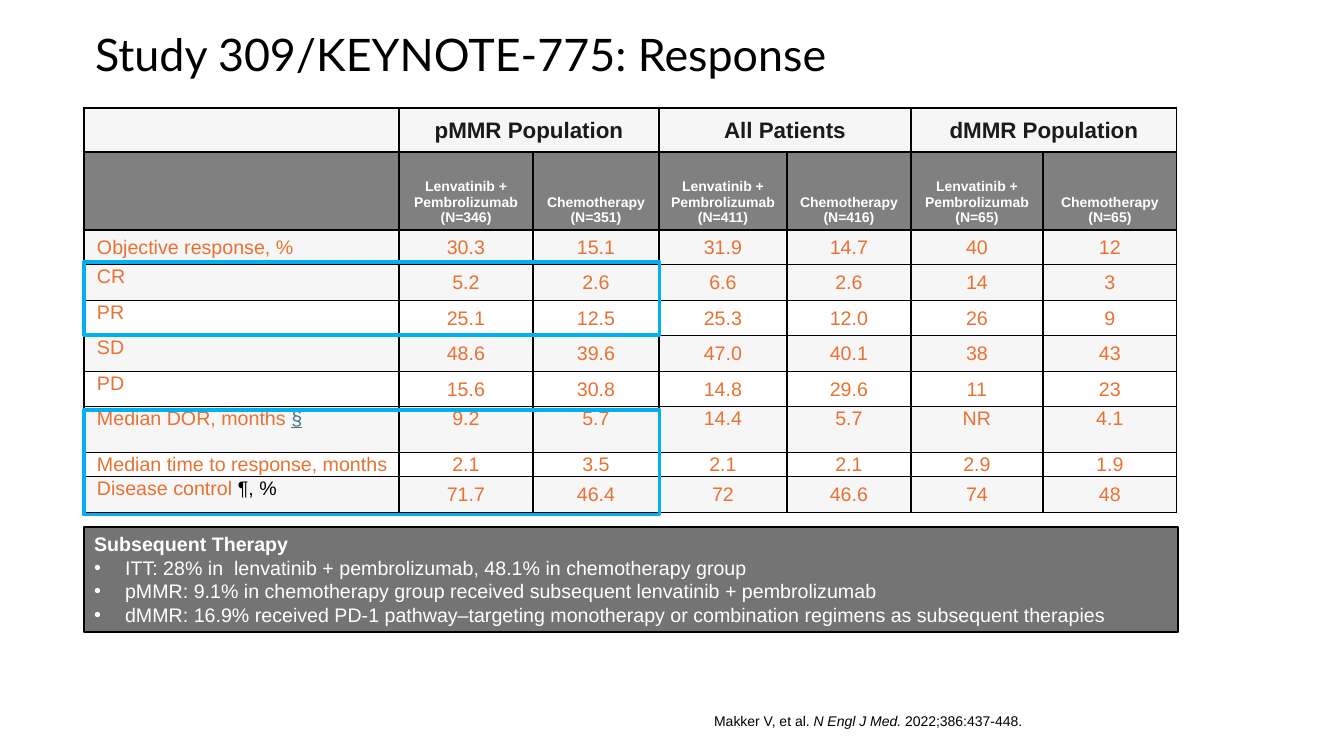
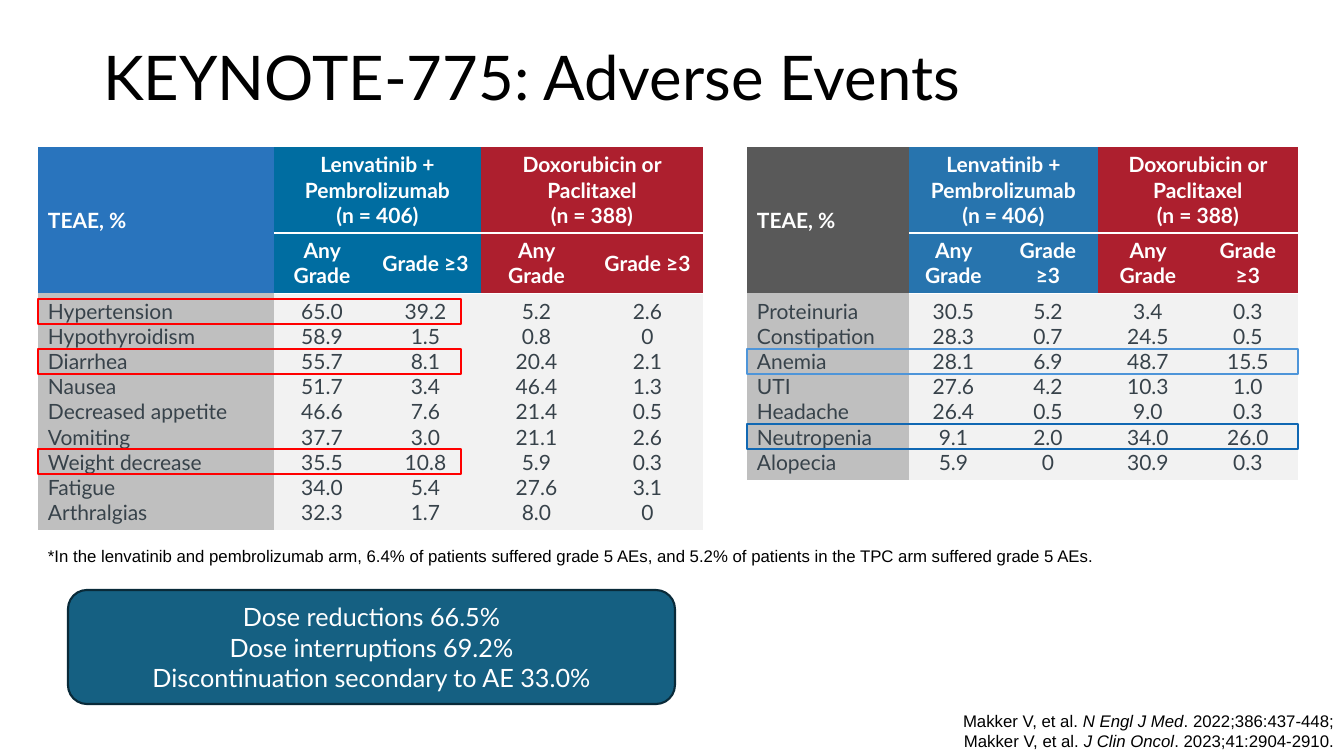
from dataclasses import dataclass, field

from lxml import etree
from pptx import Presentation
from pptx.dml.color import RGBColor
from pptx.enum.shapes import MSO_SHAPE
from pptx.enum.text import MSO_ANCHOR, MSO_AUTO_SIZE, PP_ALIGN
from pptx.oxml.ns import qn
from pptx.util import Emu, Pt

LEFT, CENTER, RIGHT = PP_ALIGN.LEFT, PP_ALIGN.CENTER, PP_ALIGN.RIGHT
TOP, MIDDLE, BOTTOM = MSO_ANCHOR.TOP, MSO_ANCHOR.MIDDLE, MSO_ANCHOR.BOTTOM
RECTANGLE, ROUNDED = MSO_SHAPE.RECTANGLE, MSO_SHAPE.ROUNDED_RECTANGLE
NO_AUTOFIT = MSO_AUTO_SIZE.NONE
TITLE_AND_CONTENT, TITLE_ONLY = 1, 5
PLAIN_TABLE = "{2D5ABB26-0587-4C30-8999-92F81FD0307C}"
SLIDE_WIDTH, SLIDE_HEIGHT = 1344, 756


def px(length):
    """Turn a length in pixels into EMU."""
    return Emu(round(length * 914400 / 100.8))


def text_style(name, size, color, bold=False):
    """Return the format values of one text style."""
    return {"name": name, "size": Pt(size), "color": color, "bold": bold}


@dataclass(frozen=True)
class Theme:
    """Colours and type sizes of the presentation."""

    black: str = "000000"
    white: str = "FFFFFF"
    pale: str = "F6F6F6"
    gray: str = "808080"
    panel: str = "747474"
    link: str = "467886"
    cyan: str = "00B0F0"
    red: str = "FF0000"
    sky: str = "4E95D9"
    blue: str = "1168B3"
    teal: str = "156082"
    teal_edge: str = "092A39"
    label_blue: str = "2974BD"
    label_gray: str = "595959"
    arm_teal: str = "006DA1"
    arm_blue: str = "2774AE"
    arm_red: str = "AD1F2E"
    event_fill: str = "BFBFBF"
    value_fill: str = "F2F2F2"
    text: dict = field(default_factory=lambda: {
        "title": text_style("Lato", 32, "000000"),
        "large title": text_style("Lato", 44, "000000"),
        "population": text_style("Arial", 16, "1A1A1A", True),
        "arm": text_style("Arial", 10, "FFFFFF", True),
        "response": text_style("Arial", 14, "E97132"),
        "panel": text_style("Arial", 14, "FFFFFF"),
        "small note": text_style("Arial", 10, "000000"),
        "note": text_style("Arial", 12, "000000"),
        "event header": text_style("Lato", 15, "FFFFFF", True),
        "event": text_style("Lato", 15, "37424A"),
        "callout": text_style("Lato", 18, "FFFFFF"),
    })


class Deck:
    """Holds the style and the current slide, and draws its elements."""

    def __init__(self, theme):
        """Start a presentation of the right size."""
        self.theme = theme
        self.presentation = Presentation()
        self.presentation.slide_width = px(SLIDE_WIDTH)
        self.presentation.slide_height = px(SLIDE_HEIGHT)
        self.slide = None

    def place(self, shape, box):
        """Move and size a shape."""
        for name, length in zip(("left", "top", "width", "height"), box):
            setattr(shape, name, px(length))

    def fill_text(self, frame, paragraphs, style, align=LEFT):
        """Fill a text frame with paragraphs made of strings or formatted runs."""
        for index, content in enumerate(paragraphs):
            paragraph = frame.paragraphs[0] if index == 0 else frame.add_paragraph()
            paragraph.alignment = align
            runs = [(content, {})] if isinstance(content, str) else content
            for text, changes in runs:
                run = paragraph.add_run()
                run.text = text
                formats = {**self.theme.text[style], **changes}
                color = formats.pop("color")
                for name, value in formats.items():
                    setattr(run.font, name, value)
                run.font.color.rgb = RGBColor.from_string(color)

    def paint(self, shape, fill, line, width):
        """Set the fill and outline of a shape."""
        if fill:
            shape.fill.solid()
            shape.fill.fore_color.rgb = RGBColor.from_string(fill)
        else:
            shape.fill.background()
        shape.line.color.rgb = RGBColor.from_string(line)
        shape.line.width = Pt(width)

    def new_slide(self, title, box, style, layout):
        """Add a slide and its title."""
        self.slide = self.presentation.slides.add_slide(
            self.presentation.slide_layouts[layout])
        shape = self.slide.shapes.title
        self.place(shape, box)
        shape.text_frame.auto_size = NO_AUTOFIT
        shape.text_frame.vertical_anchor = MIDDLE
        self.fill_text(shape.text_frame, [title], style)
        shape.text_frame.paragraphs[0].line_spacing = 0.9

    def list_panel(self, box, heading, items):
        """Turn the body placeholder into a filled panel with a bulleted list."""
        shape = self.slide.placeholders[1]
        self.place(shape, box)
        self.paint(shape, self.theme.panel, self.theme.black, 1.5)
        shape.text_frame.auto_size = NO_AUTOFIT
        self.fill_text(shape.text_frame, [[(heading, {"bold": True})], *items], "panel")
        for index, paragraph in enumerate(shape.text_frame.paragraphs):
            paragraph.space_before = Pt(0)
            properties = paragraph._p.get_or_add_pPr()
            indent = px(31) if index else 0
            properties.set("marL", str(indent))
            properties.set("indent", str(-indent))
            if index:
                etree.SubElement(properties, qn("a:buChar"), char="•")
            else:
                etree.SubElement(properties, qn("a:buNone"))

    def text_box(self, box, content, style, align=LEFT, anchor=TOP):
        """Add a wrapped text box with one paragraph."""
        shape = self.slide.shapes.add_textbox(*map(px, box))
        shape.text_frame.word_wrap = True
        shape.text_frame.vertical_anchor = anchor
        self.fill_text(shape.text_frame, [content], style, align)

    def shape(self, kind, box, line, width=1.5, fill=None):
        """Add a preset shape without shadow."""
        shape = self.slide.shapes.add_shape(kind, *map(px, box))
        shape.shadow.inherit = False
        self.paint(shape, fill, line, width)
        return shape

    def callout(self, box, lines):
        """Add a rounded box with centred lines."""
        shape = self.shape(ROUNDED, box, self.theme.teal_edge, fill=self.theme.teal)
        shape.text_frame.vertical_anchor = MIDDLE
        self.fill_text(shape.text_frame, lines, "callout", CENTER)

    def table(self, left, top, widths, heights):
        """Add a plain table with the given column widths and row heights."""
        frame = self.slide.shapes.add_table(
            len(heights), len(widths), px(left), px(top), px(sum(widths)), px(sum(heights)))
        table = frame.table
        table.first_row = table.horz_banding = False
        table._tbl.tblPr.find(qn("a:tableStyleId")).text = PLAIN_TABLE
        for column, width in zip(table.columns, widths):
            column.width = px(width)
        for row, height in zip(table.rows, heights):
            row.height = px(height)
        return table

    def cell(self, cell, content, style, fill, align=CENTER, anchor=MIDDLE,
             margins=(10, 5, 10, 5), sides="", border="FFFFFF"):
        """Fill and border one table cell and set its text."""
        names = ("margin_left", "margin_top", "margin_right", "margin_bottom")
        for name, margin in zip(names, margins):
            setattr(cell, name, px(margin))
        cell.vertical_anchor = anchor
        properties = cell._tc.get_or_add_tcPr()
        for side in sides:
            line = etree.SubElement(properties, qn("a:ln" + side), w=str(Pt(1)))
            solid = etree.SubElement(line, qn("a:solidFill"))
            etree.SubElement(solid, qn("a:srgbClr"), val=border)
        cell.fill.solid()
        cell.fill.fore_color.rgb = RGBColor.from_string(fill)
        if content:
            paragraphs = content.split("\n") if isinstance(content, str) else [content]
            self.fill_text(cell.text_frame, paragraphs, style, align)

    def response_table(self, left, top, populations, arms, responses):
        """Add the table of responses by population and arm."""
        theme = self.theme
        table = self.table(left, top, [315, 134, 126, 128, 124, 132, 134],
                           [44, 78, 35, 36, 35, 36, 35, 46, 24, 36])
        grid = {"sides": "LRTB", "border": theme.black}
        header = {**grid, "margins": (10, 6, 10, 4)}
        for column in (1, 3, 5):
            table.cell(0, column).merge(table.cell(0, column + 1))
        for column, (population, arm) in enumerate(zip(populations, arms)):
            self.cell(table.cell(0, column), population, "population", theme.pale, **header)
            self.cell(table.cell(1, column), arm, "arm", theme.gray, anchor=BOTTOM, **header)
        for row, values in enumerate(responses, 2):
            fill = theme.white if row in (4, 6, 8) else theme.pale
            for column, value in enumerate(values):
                label = column == 0
                at_top = row in (7, 8) or (label and row > 2)
                self.cell(table.cell(row, column), value, "response", fill,
                          LEFT if label else CENTER, TOP if at_top else MIDDLE,
                          (13 if label else 2, 1, 2, 1), **grid)

    def event_table(self, left, top, widths, label_fill, arm_fill, events):
        """Add a table of adverse events with one text line per event."""
        theme = self.theme
        table = self.table(left, top, widths, [86, 60, 10 + 25 * len(events)])
        table.cell(0, 0).merge(table.cell(1, 0))
        self.cell(table.cell(0, 0), "TEAE, %", "event header", label_fill, LEFT)
        arms = (("Lenvatinib + Pembrolizumab\n(n = 406)", arm_fill),
                ("Doxorubicin or Paclitaxel\n(n = 388)", theme.arm_red))
        for column, (arm, fill) in zip((1, 3), arms):
            table.cell(0, column).merge(table.cell(0, column + 1))
            self.cell(table.cell(0, column), arm, "event header", fill, sides="B")
            for offset, grade in enumerate(("Any Grade", "Grade ≥3")):
                self.cell(table.cell(1, column + offset), grade, "event header", fill, sides="T")
        for column, values in enumerate(zip(*events)):
            fill, align = (theme.value_fill, CENTER) if column else (theme.event_fill, LEFT)
            self.cell(table.cell(2, column), "\n".join(values), "event", fill, align)


def response_slide(deck):
    """Build the response slide."""
    theme = deck.theme
    deck.new_slide("Study 309/KEYNOTE-775: Response", (85, 21, 868, 73), "title",
                   TITLE_AND_CONTENT)
    populations = ["", "pMMR Population", "", "All Patients", "", "dMMR Population", ""]
    arms = [""]
    for treated, control in ((346, 351), (411, 416), (65, 65)):
        arms += [f"Lenvatinib + Pembrolizumab\n(N={treated})", f"Chemotherapy\n(N={control})"]
    median_label = [("Median DOR, months ", {}),
                    ("§", {"color": theme.link, "underline": True})]
    control_label = [("Disease control ", {}), ("¶, %", {"color": theme.black})]
    deck.response_table(84, 108, populations, arms, [
        ("Objective response, %", "30.3", "15.1", "31.9", "14.7", "40", "12"),
        ("CR", "5.2", "2.6", "6.6", "2.6", "14", "3"),
        ("PR", "25.1", "12.5", "25.3", "12.0", "26", "9"),
        ("SD", "48.6", "39.6", "47.0", "40.1", "38", "43"),
        ("PD", "15.6", "30.8", "14.8", "29.6", "11", "23"),
        (median_label, "9.2", "5.7", "14.4", "5.7", "NR", "4.1"),
        ("Median time to response, months", "2.1", "3.5", "2.1", "2.1", "2.9", "1.9"),
        (control_label, "71.7", "46.4", "72", "46.6", "74", "48"),
    ])
    deck.list_panel((84, 527, 1094, 105), "Subsequent Therapy", [
        "ITT: 28% in  lenvatinib + pembrolizumab, 48.1% in chemotherapy group",
        "pMMR: 9.1% in chemotherapy group received subsequent lenvatinib + pembrolizumab",
        "dMMR: 16.9% received PD-1 pathway–targeting monotherapy or combination regimens "
        "as subsequent therapies",
    ])
    deck.text_box((565, 708, 467, 27), [
        ("Makker V, et al. ", {}), ("N Engl J Med. ", {"italic": True}),
        ("2022;386:437-448.", {})], "small note", RIGHT)
    for top, height in ((262, 73), (410, 105)):
        deck.shape(RECTANGLE, (84, top, 576, height), theme.cyan, 2.25)


def adverse_events_slide(deck):
    """Build the adverse events slide."""
    theme = deck.theme
    deck.new_slide("KEYNOTE-775: Adverse Events", (93, 8, 1159, 146), "large title", TITLE_ONLY)
    deck.event_table(38, 147, [236, 96, 111, 111, 111], theme.label_blue, theme.arm_teal, [
        ("Hypertension", "65.0", "39.2", "5.2", "2.6"),
        ("Hypothyroidism", "58.9", "1.5", "0.8", "0"),
        ("Diarrhea", "55.7", "8.1", "20.4", "2.1"),
        ("Nausea", "51.7", "3.4", "46.4", "1.3"),
        ("Decreased appetite", "46.6", "7.6", "21.4", "0.5"),
        ("Vomiting", "37.7", "3.0", "21.1", "2.6"),
        ("Weight decrease", "35.5", "10.8", "5.9", "0.3"),
        ("Fatigue", "34.0", "5.4", "27.6", "3.1"),
        ("Arthralgias", "32.3", "1.7", "8.0", "0"),
    ])
    deck.event_table(747, 147, [162, 89, 100, 100, 100], theme.label_gray, theme.arm_blue, [
        ("Proteinuria", "30.5", "5.2", "3.4", "0.3"),
        ("Constipation", "28.3", "0.7", "24.5", "0.5"),
        ("Anemia", "28.1", "6.9", "48.7", "15.5"),
        ("UTI", "27.6", "4.2", "10.3", "1.0"),
        ("Headache", "26.4", "0.5", "9.0", "0.3"),
        ("Neutropenia", "9.1", "2.0", "34.0", "26.0"),
        ("Alopecia", "5.9", "0", "30.9", "0.3"),
    ])
    deck.text_box((38, 541, 1204, 30),
                  "*In the lenvatinib and pembrolizumab arm, 6.4% of patients suffered grade 5 "
                  "AEs, and 5.2% of patients in the TPC arm suffered grade 5 AEs.", "note")
    deck.text_box((947, 706, 397, 50), [
        ("Makker V, et al. ", {}), ("N Engl J Med", {"italic": True}),
        (". 2022;386:437-448; Makker V, et al. ", {}), ("J Clin Oncol", {"italic": True}),
        (". 2023;41:2904-2910.", {})], "note", RIGHT, BOTTOM)
    highlights = [(38, 423, row, theme.red) for row in (0, 2, 6)]
    highlights += [(747, 551, 2, theme.sky), (747, 551, 5, theme.blue)]
    for left, width, row, color in highlights:
        deck.shape(RECTANGLE, (left, 299 + 25 * row, width, 25), color)
    deck.callout((68, 590, 607, 114), [
        "Dose reductions 66.5%", "Dose interruptions 69.2%",
        "Discontinuation secondary to AE 33.0%"])


def main():
    """Build and save the presentation."""
    deck = Deck(Theme())
    response_slide(deck)
    adverse_events_slide(deck)
    deck.presentation.save("out.pptx")


if __name__ == "__main__":
    main()
